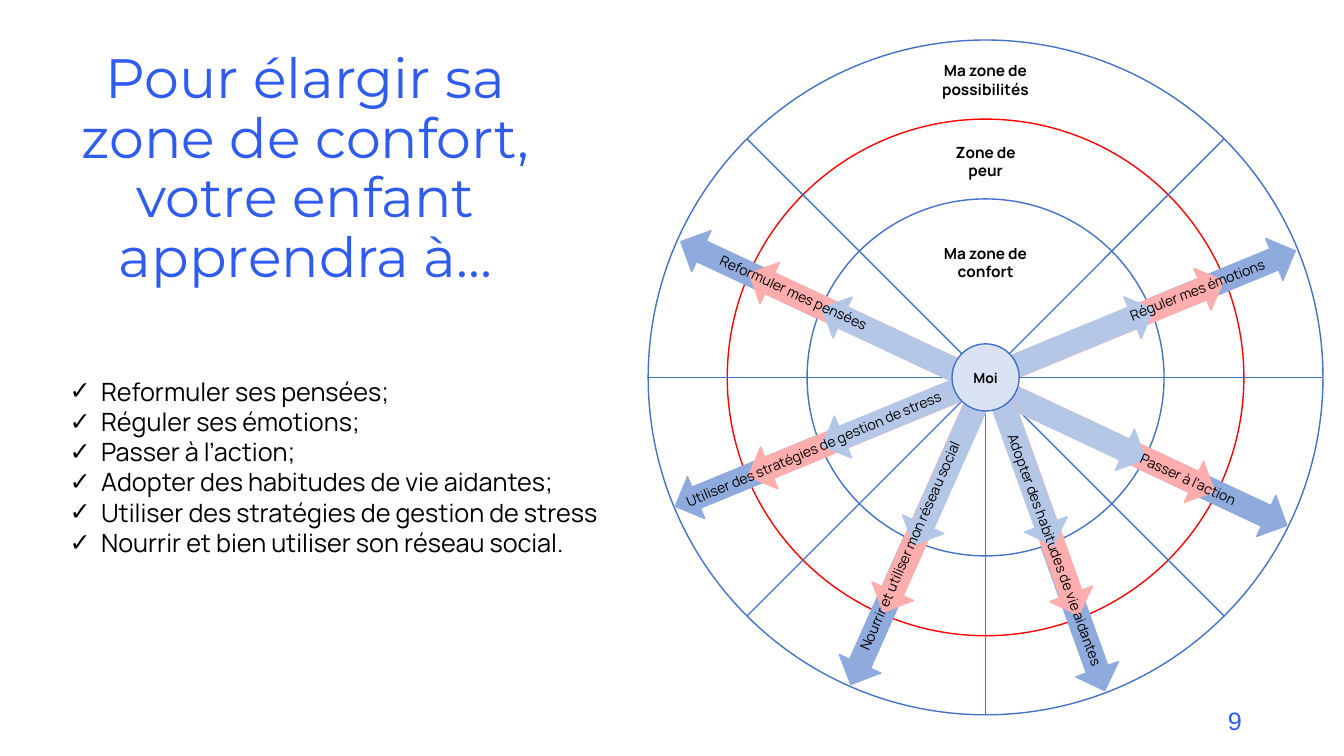
from lxml.etree import SubElement
from pptx import Presentation
from pptx.dml.color import RGBColor as RGB
from pptx.enum.shapes import MSO_CONNECTOR as Link, MSO_SHAPE as Kind
from pptx.enum.text import MSO_ANCHOR as Anchor, MSO_AUTO_SIZE as Fit, PP_ALIGN as Align
from pptx.oxml.ns import qn
from pptx.util import Pt

ROYAL = RGB(0x2F, 0x5C, 0xEE)
BLUE = RGB(0x44, 0x72, 0xC4)
RED = RGB(0xFF, 0x00, 0x00)
WHITE = RGB(0xFF, 0xFF, 0xFF)
BLACK = RGB(0x00, 0x00, 0x00)
DEEP = RGB(0x8F, 0xAA, 0xDC)
PINK = RGB(0xFF, 0xAD, 0xAD)
LIGHT = RGB(0xB4, 0xC7, 0xE7)
PALE = RGB(0xDA, 0xE3, 0xF3)

MID_X, MID_Y = 704, 269.6
RINGS = {"far": 482, "fear": 369, "near": 255, "self": 48}
SPOKE = 170.4

GOALS = [
    "Reformuler ses pensées;",
    "Réguler ses émotions;",
    "Passer à l’action;",
    "Adopter des habitudes de vie aidantes;",
    "Utiliser des stratégies de gestion de stress",
    "Nourrir et bien utiliser son réseau social.",
]
ZONES = [
    ("Ma zone de\vpossibilités", 40.3, 133),
    ("Zone de\vpeur", 98.6, 84),
    ("Ma zone de\vconfort", 170.6, 114),
]
ARROWS = [
    (25.1, [(702.7, 274, 478), (701.3, 273.2, 367), (702.7, 274, 255)]),
    (337.6, [(703.8, 270.4, 479), (704.2, 270.4, 367), (705.6, 269.6, 256)]),
    (294, [(663.1, 364.7, 272), (671.4, 346.7, 198), (680.8, 326.5, 137.5)]),
    (250.3, [(744.1, 367.6, 267), (737.3, 346.7, 197), (729, 324.4, 139)]),
]
SKILLS = [
    ("Reformuler mes pensées", 566.6, 209.5, 181.4, 24.6, Align.CENTER),
    ("Passer à l’action", 853.2, 344.9, 98, 24.7, Align.LEFT),
    ("Utiliser des stratégies de gestion de stress", 581.4, 321.1, 216.7, 337.2, Align.CENTER),
    ("Réguler mes émotions", 855.4, 207.4, 145.4, 338.5, Align.CENTER),
    ("Nourrir et utiliser mon réseau social", 650.2, 390.2, 210.2, 293.8, Align.CENTER),
    ("Adopter des habitudes de vie aidantes", 753.1, 393.1, 214.6, 69.8, Align.CENTER),
]


def apply(item, values):
    for name, value in values.items():
        setattr(item, name, value)


class Board:
    def __init__(self, slide):
        self.slide = slide
        self.text = {"name": "Manrope", "size": Pt(10), "bold": False}
        self.frame = {"word_wrap": True, "auto_size": Fit.NONE}

    def place(self, shape, left, top, width, height):
        apply(shape, {"left": Pt(left), "top": Pt(top),
                      "width": Pt(width), "height": Pt(height)})

    def letter(self, para, text, align=Align.CENTER, color=BLACK, **font):
        para.text = text
        para.alignment = align
        for run in para.runs:
            apply(run.font, {**self.text, **font})
            run.font.color.rgb = color

    def title(self, text, *area):
        shape = self.slide.shapes.title
        self.place(shape, *area)
        apply(shape.text_frame, {**self.frame, "vertical_anchor": Anchor.MIDDLE})
        para = shape.text_frame.paragraphs[0]
        self.letter(para, text, color=ROYAL, name="Montserrat", size=Pt(39.6))
        para.line_spacing = 0.9

    def list(self, items, *area):
        shape = self.slide.placeholders[1]
        self.place(shape, *area)
        frame = shape.text_frame
        apply(frame, {**self.frame, "vertical_anchor": Anchor.TOP})
        for index, item in enumerate(items):
            para = frame.add_paragraph() if index else frame.paragraphs[0]
            props = para._p.get_or_add_pPr()
            props.set("marL", str(Pt(22.5)))
            props.set("indent", str(-Pt(22.5)))
            SubElement(props, qn("a:buFont"), typeface="Arial")
            SubElement(props, qn("a:buChar"), char="✓")
            self.letter(para, item, Align.LEFT, size=Pt(18))
            apply(para, {"space_before": Pt(0), "space_after": Pt(0), "line_spacing": 1.0})

    def label(self, text, left, top, width, height, turn=0, wrap=True, **look):
        shape = self.slide.shapes.add_textbox(Pt(left), Pt(top), Pt(width), Pt(height))
        shape.rotation = turn
        apply(shape.text_frame, {**self.frame, "word_wrap": wrap})
        self.letter(shape.text_frame.paragraphs[0], text, **look)

    def shape(self, kind, x, y, width, height, fill, edge, turn=0):
        shape = self.slide.shapes.add_shape(
            kind, Pt(x - width / 2), Pt(y - height / 2), Pt(width), Pt(height))
        shape.rotation = turn
        shape.shadow.inherit = False
        shape.fill.solid()
        shape.fill.fore_color.rgb = fill
        shape.line.color.rgb = edge
        shape.line.width = Pt(1)
        return shape

    def ring(self, name, fill=WHITE, edge=BLUE):
        size = RINGS[name]
        return self.shape(Kind.OVAL, MID_X, MID_Y, size, size, fill, edge)

    def arrow(self, turn, x, y, length, color):
        self.shape(Kind.LEFT_RIGHT_ARROW, x, y, length, 32.4, color, color, turn)

    def line(self, *ends):
        link = self.slide.shapes.add_connector(Link.STRAIGHT, *map(Pt, ends))
        link.line.color.rgb = BLUE
        link.line.width = Pt(1)
        SubElement(link._element.spPr, qn("a:effectLst"))


def main():
    deck = Presentation()
    apply(deck, {"slide_width": Pt(960), "slide_height": Pt(540)})
    board = Board(deck.slides.add_slide(deck.slide_layouts[1]))

    board.title("Pour élargir sa zone de confort, votre enfant apprendra à…",
                41.8, 35, 352.8, 173)
    board.label("9", 678.2, 500.4, 216, 28.8, align=Align.RIGHT,
                color=ROYAL, name="Arial", size=Pt(18))
    board.list(GOALS, 42.5, 265, 397.4, 138)

    board.ring("far")
    board.ring("fear", edge=RED)
    for turn, spans in ARROWS:
        board.arrow(turn, *spans[0], DEEP)
    board.ring("near")

    edge = RINGS["far"] / 2
    for side in (-1, 1):
        board.line(MID_X - SPOKE, MID_Y + side * SPOKE, MID_X + SPOKE, MID_Y - side * SPOKE)
    board.line(MID_X, MID_Y + edge, MID_X, MID_Y + RINGS["self"] / 2)
    board.line(MID_X - edge, MID_Y, MID_X + edge, MID_Y)

    for text, top, width in ZONES:
        board.label(text, MID_X - width / 2, top, width, 20.2,
                    wrap=False, size=Pt(11), bold=True)
    for turn, spans in ARROWS:
        for span, color in zip(spans[1:], (PINK, LIGHT)):
            board.arrow(turn, *span, color)
    for text, x, y, width, turn, align in SKILLS:
        board.label(text, x - width / 2, y - 10.1, width, 20.2, turn, align=align)

    hub = board.ring("self", PALE)
    apply(hub.text_frame, {"word_wrap": False, "vertical_anchor": Anchor.MIDDLE})
    board.letter(hub.text_frame.paragraphs[0], "Moi", bold=True)
    deck.save("out.pptx")


if __name__ == "__main__":
    main()
